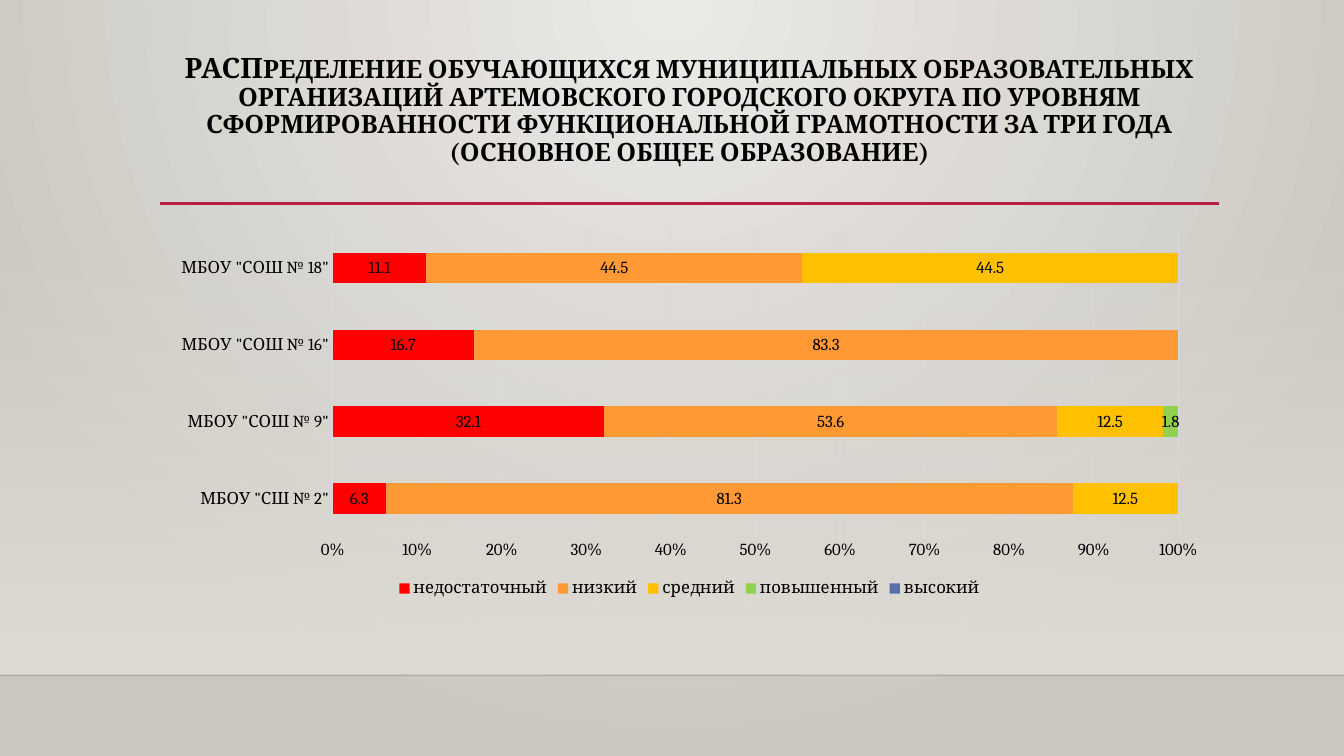
from lxml import etree
from pptx import Presentation
from pptx import oxml
from pptx import util as u
from pptx.chart import data as chart_data
from pptx.dml import color
from pptx.enum import chart as charts, shapes, text
from pptx.oxml import ns

COLORS = {
    "black": "000000", "glow": "ECEAE7", "edge": "CAC7C1", "wall": "DFDBD5",
    "floor": "000001", "accent": "B71E42", "grid": "D9D9D9",
}
FONT = "Cambria"
SERIES = [
    ("недостаточный", "FF0000", (6.3, 32.1, 16.7, 11.1)),
    ("низкий", "FF9933", (81.3, 53.6, 83.3, 44.5)),
    ("средний", "FFC000", (12.5, 12.5, None, 44.5)),
    ("повышенный", "92D050", (None, 1.8, None, None)),
    ("высокий", "586EA6", (None, None, None, None)),
]


def rgb(name):
    return color.RGBColor.from_string(COLORS.get(name, name))


def set_font(font, size):
    font.name = FONT
    font.size = u.Pt(size)
    font.color.rgb = rgb("black")


presentation = Presentation()
presentation.slide_width = u.Pt(960)
presentation.slide_height = u.Pt(540)
slide = presentation.slides.add_slide(presentation.slide_layouts[6])

background = slide.background.fill
background.gradient()
for stop, name in zip(background.gradient_stops, ("glow", "edge")):
    stop.color.rgb = rgb(name)
gradient = slide.background._cSld.find(".//" + ns.qn("a:gradFill"))
gradient.replace(gradient.find(ns.qn("a:lin")), oxml.parse_xml(
    f'<a:path {ns.nsdecls("a")} path="circle">'
    '<a:fillToRect l="43000" t="0" r="43000" b="100000"/></a:path>'))

wall = slide.shapes.add_shape(
    shapes.MSO_SHAPE.RECTANGLE, u.Pt(0), u.Pt(159), u.Pt(960), u.Pt(323.4))
wall.shadow.inherit = False
wall.line.fill.background()
wall.fill.gradient()
for stop in wall.fill.gradient_stops:
    stop.color.rgb = rgb("wall")
wall.fill.gradient_angle = 270
clear_color = wall._element.spPr.find(".//" + ns.qn("a:srgbClr"))
etree.SubElement(clear_color, ns.qn("a:alpha"), val="0")

for name, left, right, top, width, alpha in (
    ("floor", 0, 960, 482.4, 1, 20000),
    ("accent", 114.5, 871, 145.4, 2.5, 100000),
):
    line = slide.shapes.add_connector(
        shapes.MSO_CONNECTOR.STRAIGHT, u.Pt(left), u.Pt(top), u.Pt(right), u.Pt(top))
    line.line.color.rgb = rgb(name)
    line.line.width = u.Pt(width)
    line_color = line._element.spPr.find(".//" + ns.qn("a:srgbClr"))
    etree.SubElement(line_color, ns.qn("a:alpha"), val=str(alpha))
    etree.SubElement(line._element.spPr, ns.qn("a:effectLst"))

title = slide.shapes.add_textbox(u.Pt(114.5), u.Pt(15), u.Pt(756), u.Pt(128))
title.text_frame.word_wrap = True
title.text_frame.vertical_anchor = text.MSO_ANCHOR.MIDDLE
paragraph = title.text_frame.paragraphs[0]
paragraph.alignment = text.PP_ALIGN.CENTER
paragraph.line_spacing = 0.9
for words, size in (
    ("РАСП", 20),
    ("РЕДЕЛЕНИЕ ОБУЧАЮЩИХСЯ МУНИЦИПАЛЬНЫХ ОБРАЗОВАТЕЛЬНЫХ ОРГАНИЗАЦИЙ "
     "АРТЕМОВСКОГО ГОРОДСКОГО ОКРУГА ПО УРОВНЯМ СФОРМИРОВАННОСТИ "
     "ФУНКЦИОНАЛЬНОЙ ГРАМОТНОСТИ ЗА ТРИ ГОДА (ОСНОВНОЕ ОБЩЕЕ ОБРАЗОВАНИЕ)", 18),
):
    run = paragraph.add_run()
    run.text = words
    set_font(run.font, size)
    run.font.bold = True

levels = chart_data.CategoryChartData(number_format="0.0")
levels.categories = [
    'МБОУ "СШ № 2"', 'МБОУ "СОШ № 9"', 'МБОУ "СОШ № 16"', 'МБОУ "СОШ № 18"']
for name, fill, values in SERIES:
    levels.add_series(name, values)
chart = slide.shapes.add_chart(
    charts.XL_CHART_TYPE.BAR_STACKED_100,
    u.Pt(114.5), u.Pt(158.5), u.Pt(756), u.Pt(271.5), levels).chart
set_font(chart.font, 12)
chart.has_title = False
chart.has_legend = True
chart.legend.position = charts.XL_LEGEND_POSITION.BOTTOM
chart.legend.include_in_layout = False
set_font(chart.legend.font, 12)

plot = chart.plots[0]
plot.gap_width = 150
plot.overlap = 100
plot.vary_by_categories = False
for series, (name, fill, values) in zip(plot.series, SERIES):
    series.format.fill.solid()
    series.format.fill.fore_color.rgb = rgb(fill)
    if any(values):
        labels = series.data_labels
        labels.show_value = True
        labels.number_format = "0.0"
        labels.number_format_is_linked = False
        set_font(labels.font, 12)

for axis in (chart.category_axis, chart.value_axis):
    axis.major_tick_mark = charts.XL_TICK_MARK.NONE
    axis.minor_tick_mark = charts.XL_TICK_MARK.NONE
    set_font(axis.tick_labels.font, 12)
category_line = chart.category_axis.format.line
value_axis = chart.value_axis
value_axis.format.line.fill.background()
value_axis.has_major_gridlines = True
value_axis.major_unit = 0.1
value_axis.tick_labels.number_format = "0%"
value_axis.tick_labels.number_format_is_linked = False
for line_format in (category_line, value_axis.major_gridlines.format.line):
    line_format.color.rgb = rgb("grid")
    line_format.width = u.Pt(0.75)

presentation.save("out.pptx")
